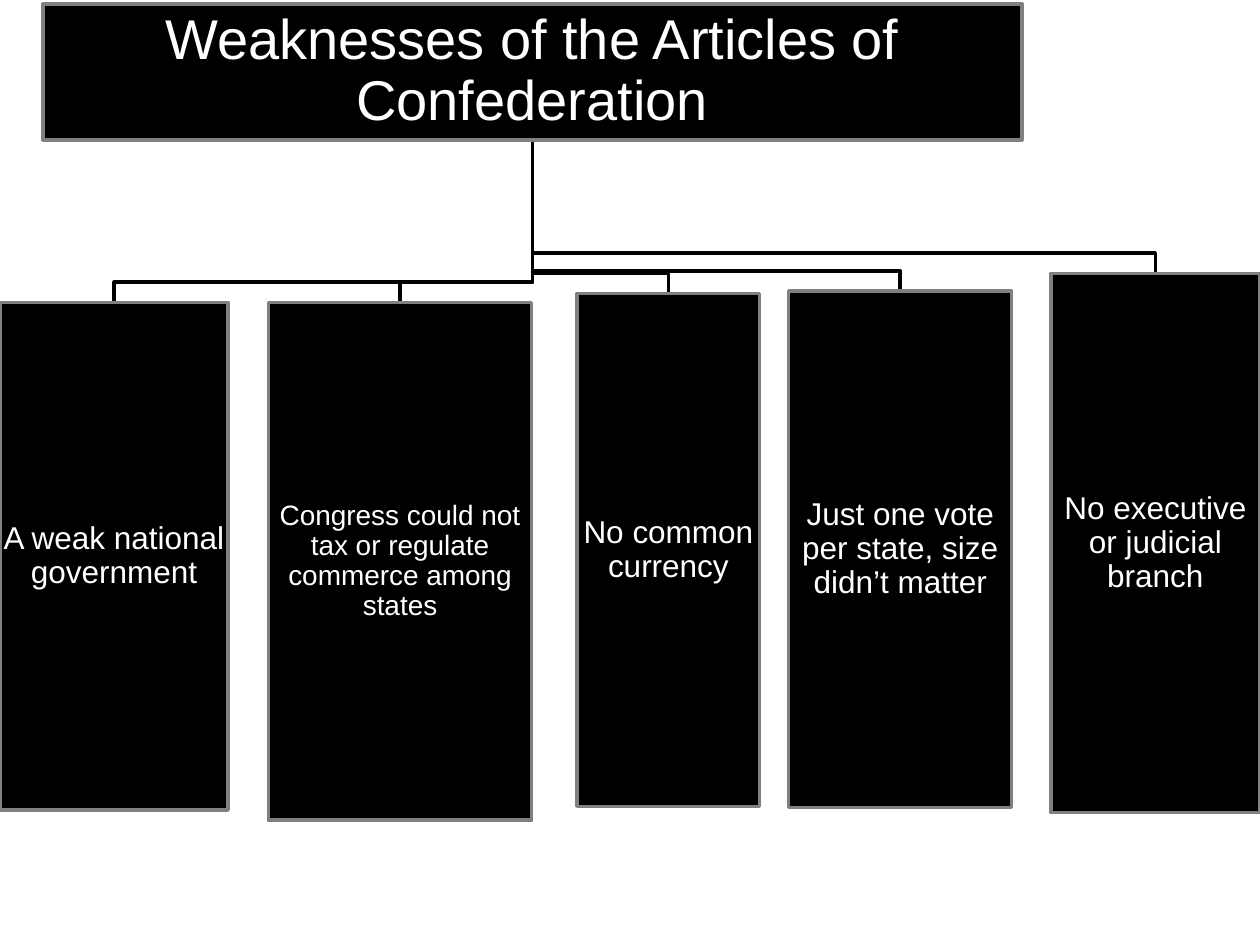
from dataclasses import dataclass

from pptx import Presentation
from pptx.dml.color import RGBColor
from pptx.enum.shapes import MSO_SHAPE
from pptx.enum.text import MSO_ANCHOR, MSO_AUTO_SIZE, PP_ALIGN
from pptx.shapes.autoshape import Shape
from pptx.slide import Slide
from pptx.util import Inches, Pt

RECT = MSO_SHAPE.RECTANGLE
MIDDLE = MSO_ANCHOR.MIDDLE
NO_FIT = MSO_AUTO_SIZE.NONE
CENTER = PP_ALIGN.CENTER

BLACK = RGBColor(0x00, 0x00, 0x00)
GRAY = RGBColor(0x80, 0x80, 0x80)
WHITE = RGBColor(0xFF, 0xFF, 0xFF)

FONT = "Arial"
LINE_WIDTH = Pt(2)
ELBOW_GAP = 0.16


@dataclass(frozen=True)
class Box:
    text: str
    left: float
    top: float
    width: float
    height: float
    size: int = 18
    inset: float = 0.01

    @property
    def center(self) -> float:
        return self.left + self.width / 2

    @property
    def bottom(self) -> float:
        return self.top + self.height


ROOT = Box("Weaknesses of the Articles of Confederation",
           0.34, 0.03, 7.77, 1.08, 32, 0.02)
WEAKNESSES = [
    Box("A weak national government", 0, 2.4, 1.81, 4.03),
    Box("Congress could not tax or regulate commerce among states",
        2.13, 2.4, 2.09, 4.11, 16),
    Box("No common currency", 4.58, 2.33, 1.45, 4.07),
    Box("Just one vote per state, size didn’t matter", 6.26, 2.31, 1.77, 4.1),
    Box("No executive or judicial branch", 8.34, 2.17, 1.66, 4.28),
]


def style_box(sp: Shape, box: Box) -> None:
    sp.left, sp.top = Inches(box.left), Inches(box.top)
    sp.width, sp.height = Inches(box.width), Inches(box.height)
    sp.shadow.inherit = False
    sp.fill.solid()
    sp.fill.fore_color.rgb = BLACK
    sp.line.color.rgb = GRAY
    sp.line.width = LINE_WIDTH

    tf = sp.text_frame
    tf.word_wrap = True
    tf.auto_size = NO_FIT
    tf.vertical_anchor = MIDDLE
    tf.margin_left = tf.margin_right = Inches(box.inset)
    tf.margin_top = tf.margin_bottom = Inches(box.inset)
    p = tf.paragraphs[0]
    p.alignment = CENTER
    p.line_spacing = 0.9
    r = p.add_run()
    r.text = box.text
    r.font.name = FONT
    r.font.size = Pt(box.size)
    r.font.color.rgb = WHITE


def add_branch(slide: Slide, parent: Box, child: Box) -> None:
    elbow = child.top - ELBOW_GAP
    points = [
        (parent.center, elbow),
        (child.center, elbow),
        (child.center, child.top),
    ]
    builder = slide.shapes.build_freeform(
        Inches(parent.center), Inches(parent.bottom))
    builder.add_line_segments(
        [(Inches(x), Inches(y)) for x, y in points], close=False)
    sp = builder.convert_to_shape()
    sp.shadow.inherit = False
    sp.fill.background()
    sp.line.color.rgb = BLACK
    sp.line.width = LINE_WIDTH


def main() -> None:
    prs = Presentation()
    prs.slide_width, prs.slide_height = Inches(10), Inches(7.5)
    slide = prs.slides.add_slide(prs.slide_layouts[5])

    for box in reversed(WEAKNESSES):
        add_branch(slide, ROOT, box)

    title = slide.shapes.title
    style_box(title, ROOT)
    slide.shapes.element.append(title.element)

    for box in WEAKNESSES:
        sp = slide.shapes.add_shape(RECT, 0, 0, 0, 0)
        style_box(sp, box)

    prs.save("out.pptx")


if __name__ == "__main__":
    main()
